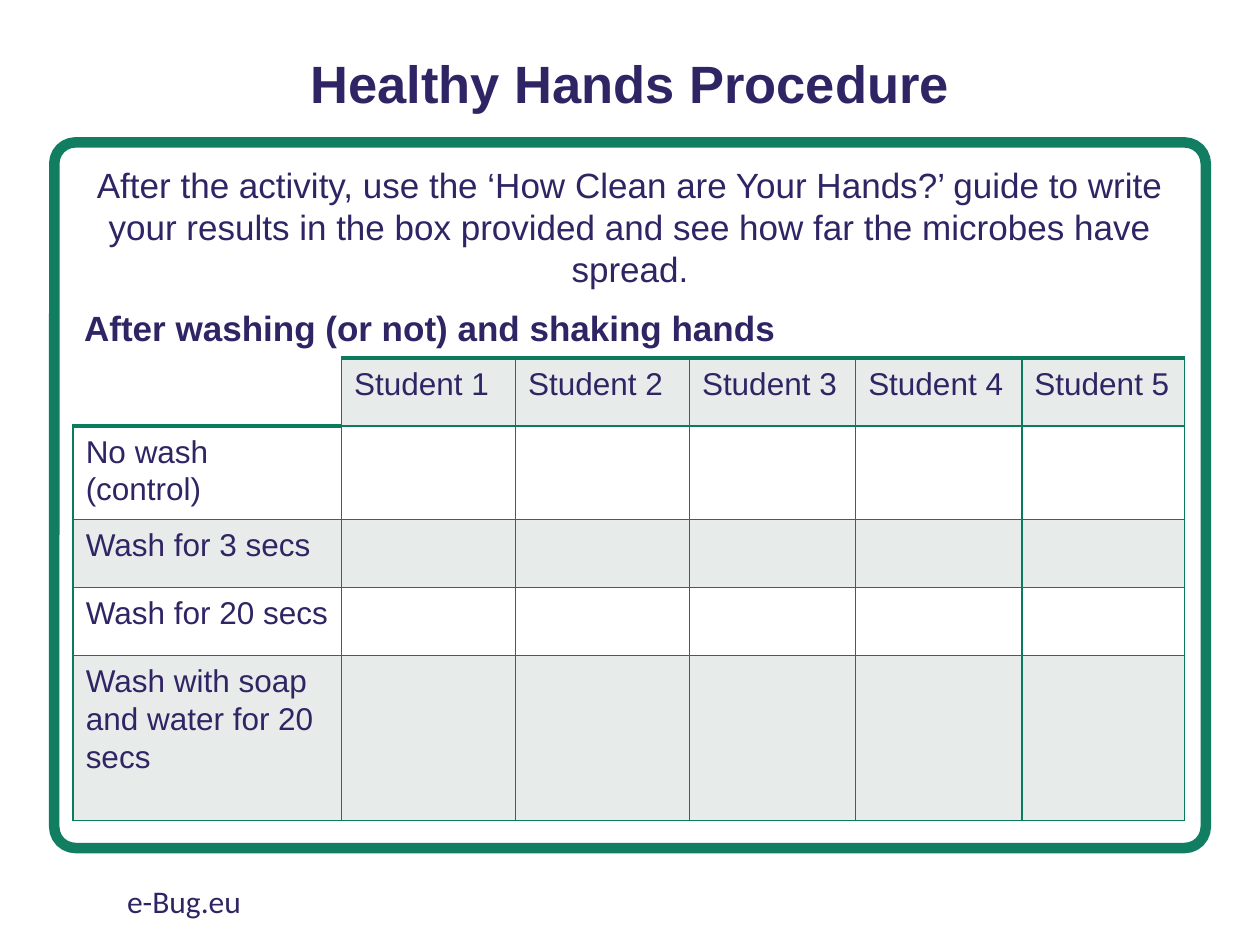
from lxml import etree
from pptx import Presentation
from pptx.dml.color import RGBColor
from pptx.enum import shapes, text
from pptx.oxml.ns import qn
from pptx.util import Pt

NAVY, GREEN, RULE, BAND = "302564", "117E62", "0B7B5D", "E7ECEA"
THIN, THICK = 1, 2.25
COLUMN_WIDTHS = [153.4, 99.4, 99.4, 95, 95, 92.9]
ROW_HEIGHTS = [38.9, 38.9, 38.9, 38.9, 94.3]
TREATMENTS = ["No wash (control)", "Wash for 3 secs", "Wash for 20 secs",
              "Wash with soap and water for 20 secs"]
BODY = dict(name="Arial", size=Pt(20))
HEADING = dict(BODY, bold=True)
TITLE = dict(HEADING, size=Pt(30))
CELL = dict(BODY, size=Pt(18))
FOOTER = dict(name="Calibri", size=Pt(18))


def rgb(value):
    return RGBColor.from_string(value)


def write(frame, wording, font, **paragraph_format):
    paragraph = frame.paragraphs[0]
    for key, value in paragraph_format.items():
        setattr(paragraph, key, value)
    run = paragraph.add_run()
    run.text = wording
    for key, value in font.items():
        setattr(run.font, key, value)
    run.font.color.rgb = rgb(NAVY)


def add_text(slide, box, wording, font, frame_format=None, **paragraph_format):
    frame = slide.shapes.add_textbox(*map(Pt, box)).text_frame
    for key, value in {"word_wrap": True, **(frame_format or {})}.items():
        setattr(frame, key, value)
    write(frame, wording, font, **paragraph_format)


def add_panel(slide, box):
    panel = slide.shapes.add_shape(shapes.MSO_SHAPE.ROUNDED_RECTANGLE, *map(Pt, box))
    panel.adjustments[0] = 0.03
    panel.shadow.inherit = False
    panel.fill.background()
    panel.line.color.rgb = rgb(GREEN)
    panel.line.width = Pt(6)


def add_instructions(slide, box):
    left, top, width, _ = box
    grow = {"auto_size": text.MSO_AUTO_SIZE.SHAPE_TO_FIT_TEXT}
    add_text(slide, (left + 16.5, top + 8.6, width - 33, 80),
             "After the activity, use the ‘How Clean are Your Hands?’ guide to write "
             "your results in the box provided and see how far the microbes have spread.",
             BODY, grow, alignment=text.PP_ALIGN.CENTER)
    add_text(slide, (left + 10, top + 88.6, 559.4, 31),
             "After washing (or not) and shaking hands", HEADING, grow, line_spacing=1.07)


def set_borders(cell, widths):
    """Draw the left, right, top and bottom borders; a width of 0 hides one."""
    properties = cell._tc.get_or_add_tcPr()
    for side, width in zip("LRTB", widths):
        line = etree.SubElement(properties, qn(f"a:ln{side}"), w=str(Pt(width)))
        if width:
            fill = etree.SubElement(line, qn("a:solidFill"))
            etree.SubElement(fill, qn("a:srgbClr"), val=RULE)
        else:
            etree.SubElement(line, qn("a:noFill"))


def border_widths(row, column):
    if (row, column) == (0, 0):
        return 0, THIN, 0, THICK
    outer_top = row == 0 or (row, column) == (1, 0)
    return THIN, THIN, THICK if outer_top else THIN, THIN


def add_results_table(slide, box):
    table = slide.shapes.add_table(
        len(ROW_HEIGHTS), len(COLUMN_WIDTHS), *map(Pt, box)).table
    table.first_row = table.horz_banding = False
    for column, width in zip(table.columns, COLUMN_WIDTHS):
        column.width = Pt(width)
    for row, height in zip(table.rows, ROW_HEIGHTS):
        row.height = Pt(height)

    students = [f"Student {number}" for number in range(1, len(COLUMN_WIDTHS))]
    labels = {(0, i): student for i, student in enumerate(students, 1)}
    labels.update({(i, 0): treatment for i, treatment in enumerate(TREATMENTS, 1)})
    for row in range(len(ROW_HEIGHTS)):
        for column in range(len(COLUMN_WIDTHS)):
            cell = table.cell(row, column)
            set_borders(cell, border_widths(row, column))
            if row % 2 == 0 and (row, column) != (0, 0):
                cell.fill.solid()
                cell.fill.fore_color.rgb = rgb(BAND)
            else:
                cell.fill.background()
            if (row, column) in labels:
                write(cell.text_frame, labels[row, column], CELL, line_spacing=1.07)


def main():
    deck = Presentation()
    deck.slide_width, deck.slide_height = Pt(720), Pt(540)
    slide = deck.slides.add_slide(deck.slide_layouts[6])
    panel_box = (31, 81.4, 658, 403.2)

    add_text(slide, (35.3, 15.8, 649.4, 67), "Healthy Hands Procedure", TITLE,
             {"vertical_anchor": text.MSO_ANCHOR.MIDDLE},
             alignment=text.PP_ALIGN.CENTER, line_spacing=0.9)
    add_panel(slide, panel_box)
    add_instructions(slide, panel_box)
    add_results_table(slide, (41.8, 204.5, sum(COLUMN_WIDTHS), sum(ROW_HEIGHTS)))
    add_text(slide, (65.5, 500.4, 243.4, 28.8), "e-Bug.eu", FOOTER)
    deck.save("out.pptx")


if __name__ == "__main__":
    main()
